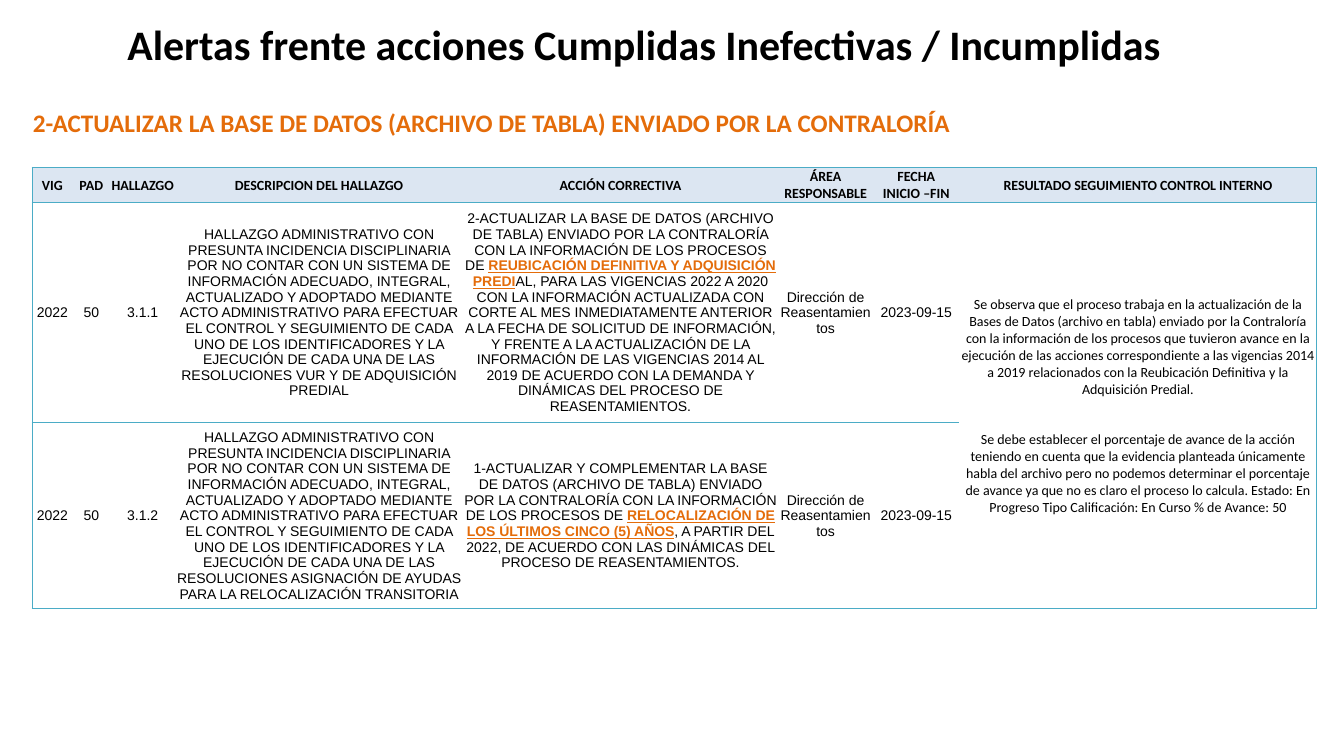
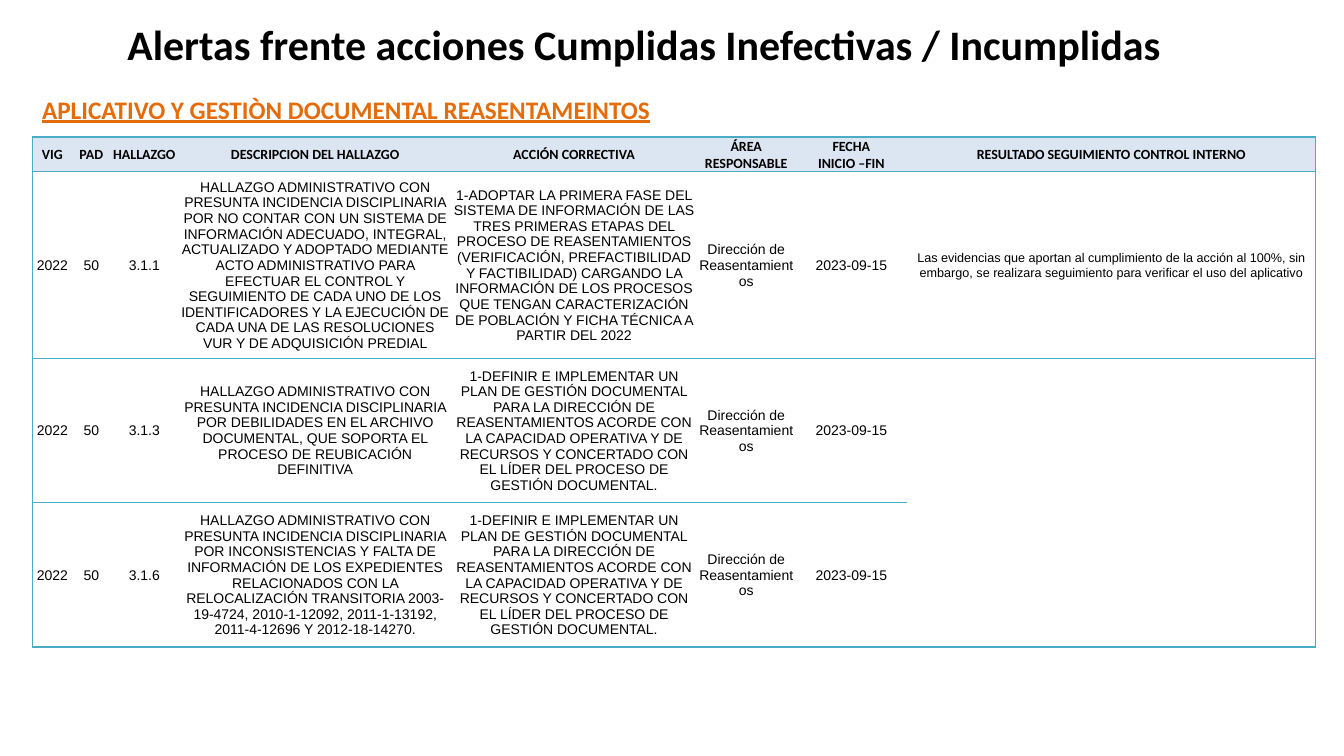
"""Build two slides of alerts on ineffective or unfulfilled actions."""
from dataclasses import dataclass

from lxml import etree
from pptx import Presentation
from pptx.dml.color import RGBColor
from pptx.enum.text import MSO_ANCHOR, MSO_AUTO_SIZE, PP_ALIGN
from pptx.oxml.ns import qn
from pptx.util import Cm, Pt

CENTER = PP_ALIGN.CENTER
MIDDLE = MSO_ANCHOR.MIDDLE
BOTTOM = MSO_ANCHOR.BOTTOM
FIT_SHAPE = MSO_AUTO_SIZE.SHAPE_TO_FIT_TEXT

COLORS = {
    "text": "000000",
    "accent": "E46C0A",
    "header": "DCE6F2",
    "body": "FFFFFF",
    "border": "4BACC6",
}
HEADING_FONT = "Calibri"
BODY_FONT = "Arial"
HIGHLIGHT_MARK = "*"
PARAGRAPH_GAP = Pt(24)
TABLE_LEFT = 0.81
SUBTITLE_SIZE = (26.31, 1.02)

TITLE = "Alertas frente acciones Cumplidas Inefectivas / Incumplidas"
HEADERS = (
    "VIG", "PAD", "HALLAZGO", "DESCRIPCION DEL HALLAZGO", "ACCIÓN CORRECTIVA",
    "ÁREA RESPONSABLE", "FECHA\nINICIO –FIN", "RESULTADO SEGUIMIENTO CONTROL INTERNO",
)
RESULT_COLUMN = len(HEADERS) - 1
YEAR, PAD, AREA, DATE = "2022", "50", "Dirección de Reasentamientos", "2023-09-15"

FINDING_START = "HALLAZGO ADMINISTRATIVO CON PRESUNTA INCIDENCIA DISCIPLINARIA POR "
SYSTEM_FINDING = FINDING_START + (
    "NO CONTAR CON UN SISTEMA DE INFORMACIÓN ADECUADO, INTEGRAL, ACTUALIZADO Y ADOPTADO "
    "MEDIANTE ACTO ADMINISTRATIVO PARA EFECTUAR EL CONTROL Y SEGUIMIENTO DE CADA UNO DE LOS "
    "IDENTIFICADORES Y LA EJECUCIÓN DE CADA UNA DE LAS RESOLUCIONES "
)
PROPERTY_FINDING = SYSTEM_FINDING + "VUR Y DE ADQUISICIÓN PREDIAL"
DATABASE = (
    "LA BASE DE DATOS (ARCHIVO DE TABLA) ENVIADO POR LA CONTRALORÍA"
)
DATABASE_SCOPE = DATABASE + " CON LA INFORMACIÓN DE LOS PROCESOS DE "
DOCUMENT_PLAN = (
    "1-DEFINIR E IMPLEMENTAR UN PLAN DE GESTIÓN DOCUMENTAL PARA LA DIRECCIÓN DE "
    "REASENTAMIENTOS ACORDE CON LA CAPACIDAD OPERATIVA Y DE RECURSOS Y CONCERTADO CON EL "
    "LÍDER DEL PROCESO DE GESTIÓN DOCUMENTAL."
)


@dataclass(frozen=True)
class TextStyle:
    """Font settings of a text."""

    size: float
    font: str = HEADING_FONT
    bold: bool = False
    underline: bool = False
    color: str = "text"


@dataclass(frozen=True)
class Finding:
    """One audited finding and its corrective action."""

    number: str
    description: str
    action: str


@dataclass(frozen=True)
class Result:
    """Follow-up result covering one or more table rows."""

    row: int
    span: int
    text: str
    style: TextStyle


@dataclass(frozen=True)
class AlertSlide:
    """Content and measures, in centimetres, of one slide."""

    subtitle: str
    subtitle_at: tuple[float, float]
    subtitle_style: TextStyle
    table_top: float
    columns: tuple[float, ...]
    rows: tuple[float, ...]
    findings: tuple[Finding, ...]
    results: tuple[Result, ...]


TITLE_STYLE = TextStyle(30, bold=True)
HEADER_STYLE = TextStyle(10, bold=True)
BODY_STYLE = TextStyle(10, BODY_FONT)

SLIDES = (
    AlertSlide(
        subtitle="2-ACTUALIZAR " + DATABASE,
        subtitle_at=(0.58, 2.59),
        subtitle_style=TextStyle(18, bold=True, color="accent"),
        table_top=4.22,
        columns=(1.02, 0.94, 1.65, 7.24, 7.95, 2.39, 2.18, 8.99),
        rows=(0.86, 5.18, 4.37),
        findings=(
            Finding(
                "3.1.1", PROPERTY_FINDING,
                "2-ACTUALIZAR " + DATABASE_SCOPE
                + "*REUBICACIÓN DEFINITIVA Y ADQUISICIÓN PREDI*AL, PARA LAS VIGENCIAS 2022 A "
                "2020 CON LA INFORMACIÓN ACTUALIZADA CON CORTE AL MES INMEDIATAMENTE ANTERIOR "
                "A LA FECHA DE SOLICITUD DE INFORMACIÓN, Y FRENTE A LA ACTUALIZACIÓN DE LA "
                "INFORMACIÓN DE LAS VIGENCIAS 2014 AL 2019 DE ACUERDO CON LA DEMANDA Y "
                "DINÁMICAS DEL PROCESO DE REASENTAMIENTOS.",
            ),
            Finding(
                "3.1.2",
                SYSTEM_FINDING + "ASIGNACIÓN DE AYUDAS PARA LA RELOCALIZACIÓN TRANSITORIA",
                "1-ACTUALIZAR Y COMPLEMENTAR " + DATABASE_SCOPE
                + "*RELOCALIZACIÓN DE LOS ÚLTIMOS CINCO (5) AÑOS*, A PARTIR DEL 2022, DE "
                "ACUERDO CON LAS DINÁMICAS DEL PROCESO DE REASENTAMIENTOS.",
            ),
        ),
        results=(
            Result(
                1, 2,
                "Se observa que el proceso trabaja en la actualización de la Bases de Datos "
                "(archivo en tabla) enviado por la Contraloría con la información de los "
                "procesos que tuvieron avance en la ejecución de las acciones correspondiente "
                "a las vigencias 2014 a 2019 relacionados con la Reubicación Definitiva y la "
                "Adquisición Predial.\n"
                "Se debe establecer el porcentaje de avance de la acción teniendo en cuenta "
                "que la evidencia planteada únicamente habla del archivo pero no podemos "
                "determinar el porcentaje de avance ya que no es claro el proceso lo calcula. "
                "Estado: En Progreso Tipo Calificación: En Curso % de Avance: 50",
                TextStyle(10),
            ),
        ),
    ),
    AlertSlide(
        subtitle="APLICATIVO Y GESTIÒN DOCUMENTAL REASENTAMEINTOS",
        subtitle_at=(0.81, 2.24),
        subtitle_style=TextStyle(18, bold=True, underline=True, color="accent"),
        table_top=3.45,
        columns=(1.02, 0.94, 1.73, 6.88, 6.17, 2.51, 2.79, 10.31),
        rows=(0.86, 4.39, 3.64, 3.64),
        findings=(
            Finding(
                "3.1.1", PROPERTY_FINDING,
                "1-ADOPTAR LA PRIMERA FASE DEL SISTEMA DE INFORMACIÓN DE LAS TRES PRIMERAS "
                "ETAPAS DEL PROCESO DE REASENTAMIENTOS (VERIFICACIÓN, PREFACTIBILIDAD Y "
                "FACTIBILIDAD) CARGANDO LA INFORMACIÓN DE LOS PROCESOS QUE TENGAN "
                "CARACTERIZACIÓN DE POBLACIÓN Y FICHA TÉCNICA A PARTIR DEL 2022",
            ),
            Finding(
                "3.1.3",
                FINDING_START + "DEBILIDADES EN EL ARCHIVO DOCUMENTAL, QUE SOPORTA EL PROCESO "
                "DE REUBICACIÓN DEFINITIVA",
                DOCUMENT_PLAN,
            ),
            Finding(
                "3.1.6",
                FINDING_START + "INCONSISTENCIAS Y FALTA DE INFORMACIÓN DE LOS EXPEDIENTES "
                "RELACIONADOS CON LA RELOCALIZACIÓN TRANSITORIA 2003-19-4724, 2010-1-12092, "
                "2011-1-13192, 2011-4-12696 Y 2012-18-14270.",
                DOCUMENT_PLAN,
            ),
        ),
        results=(
            Result(
                1, 1,
                "Las evidencias que aportan al cumplimiento de la acción al 100%, sin embargo, "
                "se realizara seguimiento para verificar el uso del aplicativo",
                TextStyle(9, BODY_FONT),
            ),
            Result(2, 2, "", BODY_STYLE),
        ),
    ),
)


def format_run(run, style: TextStyle, highlighted: bool = False) -> None:
    """Apply a text style, or its highlighted form, to a run."""
    font = run.font
    font.name = style.font
    font.size = Pt(style.size)
    font.bold = style.bold or highlighted
    font.underline = style.underline or highlighted
    font.color.rgb = RGBColor.from_string(COLORS["accent" if highlighted else style.color])


def write_text(text_frame, text: str, style: TextStyle, alignment=None) -> None:
    """Write paragraphs, highlighting the words between marks."""
    for index, line in enumerate(text.split("\n")):
        paragraph = text_frame.add_paragraph() if index else text_frame.paragraphs[0]
        paragraph.alignment = alignment
        if index and not style.bold:
            paragraph.space_before = PARAGRAPH_GAP
        for part_index, part in enumerate(line.split(HIGHLIGHT_MARK)):
            run = paragraph.add_run()
            run.text = part
            format_run(run, style, highlighted=part_index % 2 == 1)


def add_text_box(slide, left: float, top: float, width: float, height: float):
    """Add a wrapping text box and return its text frame."""
    shape = slide.shapes.add_textbox(Cm(left), Cm(top), Cm(width), Cm(height))
    shape.text_frame.word_wrap = True
    return shape.text_frame


def add_title(slide) -> None:
    """Add the title that the slides share."""
    text_frame = add_text_box(slide, 0, 0, 32.49, 2.08)
    text_frame.vertical_anchor = BOTTOM
    text_frame.margin_left = text_frame.margin_right = Cm(0.33)
    text_frame.margin_top = text_frame.margin_bottom = Cm(0.33)
    write_text(text_frame, TITLE, TITLE_STYLE, CENTER)


def set_borders(cell, visible_sides: str) -> None:
    """Draw the sides named by L, R, T and B, and clear the others."""
    properties = cell._tc.get_or_add_tcPr()
    for index, side in enumerate("LRTB"):
        line = etree.Element(qn(f"a:ln{side}"), w=str(Pt(1)))
        if side in visible_sides:
            fill = etree.SubElement(line, qn("a:solidFill"))
            etree.SubElement(fill, qn("a:srgbClr"), val=COLORS["border"])
        else:
            etree.SubElement(line, qn("a:noFill"))
        properties.insert(index, line)


def style_cell(cell, column: int, fill: str) -> None:
    """Set the margins, fill and borders of a table cell."""
    cell.vertical_anchor = MIDDLE
    cell.margin_left = cell.margin_right = cell.margin_top = Cm(0.03)
    cell.margin_bottom = 0
    cell.fill.solid()
    cell.fill.fore_color.rgb = RGBColor.from_string(COLORS[fill])
    sides = "B" if cell.is_spanned else "TB"
    sides += {0: "L", RESULT_COLUMN: "R"}.get(column, "")
    set_borders(cell, sides)


def add_findings_table(slide, content: AlertSlide) -> None:
    """Add the table of findings with its follow-up results."""
    table = slide.shapes.add_table(
        len(content.rows), len(content.columns), Cm(TABLE_LEFT), Cm(content.table_top),
        Cm(sum(content.columns)), Cm(sum(content.rows)),
    ).table
    table.first_row = table.horz_banding = False
    for column, width in zip(table.columns, content.columns):
        column.width = Cm(width)
    for row, height in zip(table.rows, content.rows):
        row.height = Cm(height)

    for column, header in enumerate(HEADERS):
        write_text(table.cell(0, column).text_frame, header, HEADER_STYLE, CENTER)
    for row, finding in enumerate(content.findings, start=1):
        values = (YEAR, PAD, finding.number, finding.description, finding.action, AREA, DATE)
        for column, value in enumerate(values):
            write_text(table.cell(row, column).text_frame, value, BODY_STYLE, CENTER)
    for result in content.results:
        cell = table.cell(result.row, RESULT_COLUMN)
        if result.span > 1:
            cell.merge(table.cell(result.row + result.span - 1, RESULT_COLUMN))
        if result.text:
            write_text(cell.text_frame, result.text, result.style, CENTER)

    for row in range(len(content.rows)):
        for column in range(len(content.columns)):
            style_cell(table.cell(row, column), column, "body" if row else "header")


def add_alert_slide(presentation, content: AlertSlide) -> None:
    """Add one slide with its title, table and subtitle."""
    slide = presentation.slides.add_slide(presentation.slide_layouts[6])
    add_title(slide)
    add_findings_table(slide, content)
    text_frame = add_text_box(slide, *content.subtitle_at, *SUBTITLE_SIZE)
    text_frame.auto_size = FIT_SHAPE
    write_text(text_frame, content.subtitle, content.subtitle_style)


def main() -> None:
    """Build and save the presentation."""
    presentation = Presentation()
    presentation.slide_width, presentation.slide_height = Cm(33.87), Cm(19.05)
    for content in SLIDES:
        add_alert_slide(presentation, content)
    presentation.save("out.pptx")


if __name__ == "__main__":
    main()
